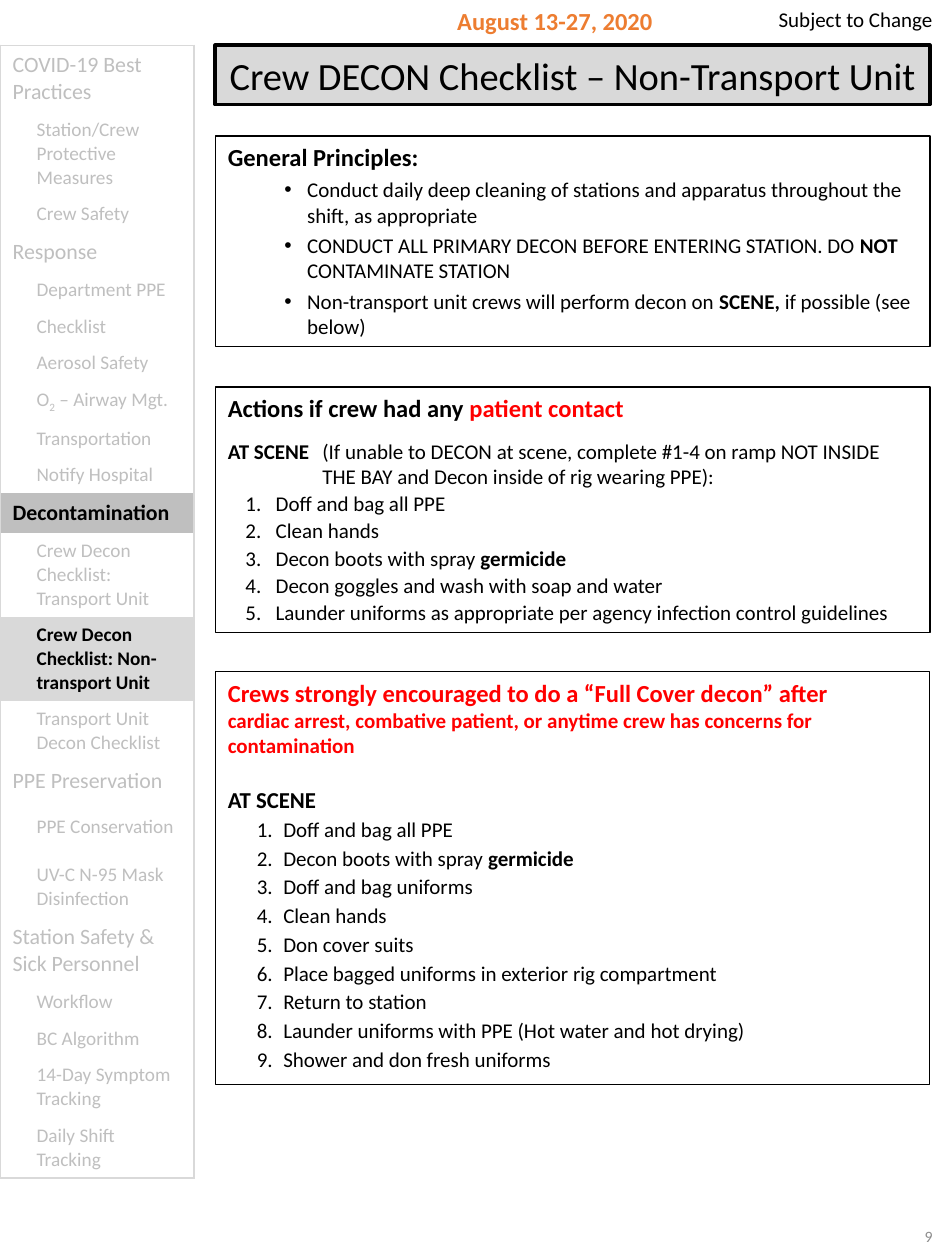
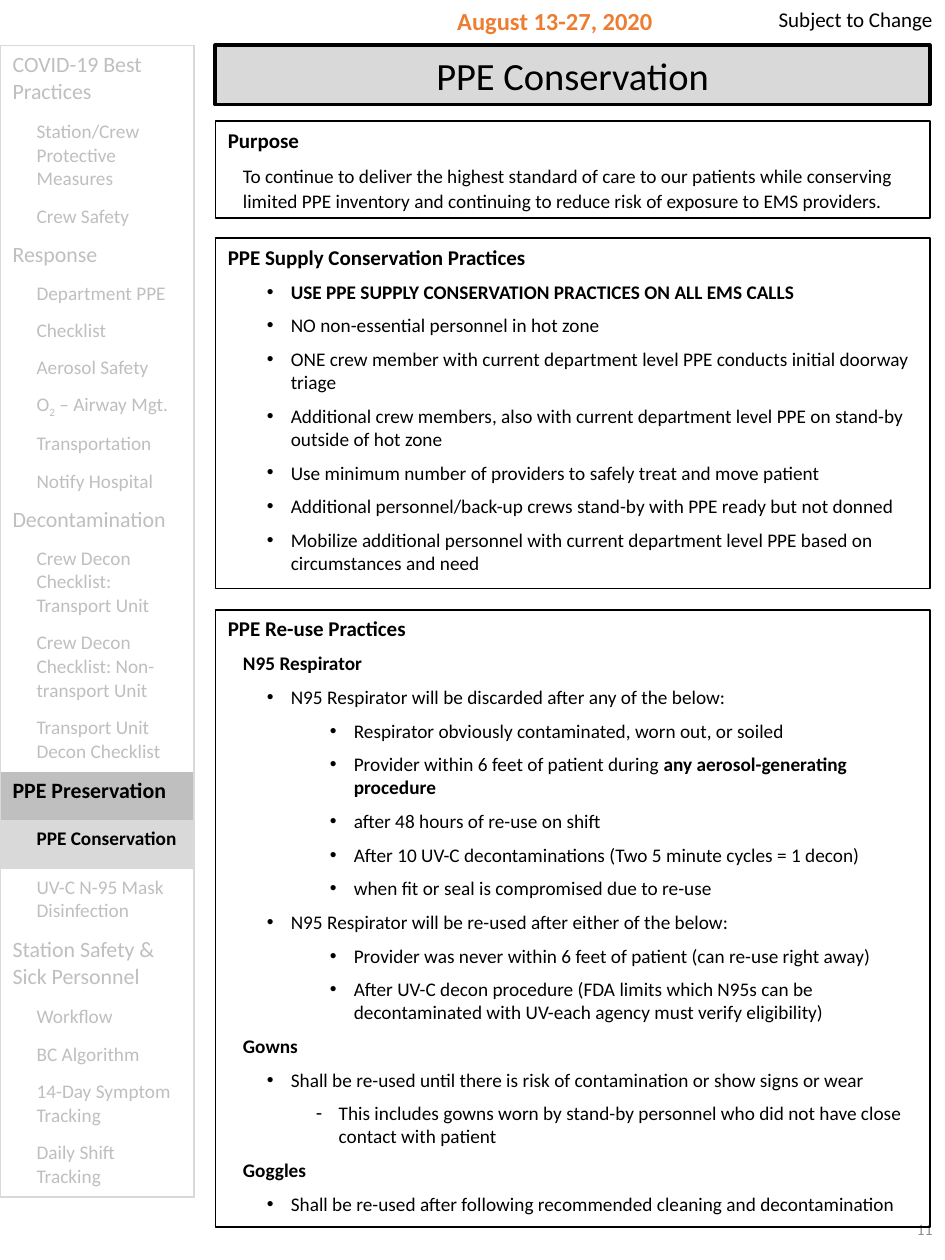
from lxml import etree
from pptx import Presentation
from pptx.dml.color import RGBColor
from pptx.enum.shapes import MSO_SHAPE
from pptx.enum.text import MSO_ANCHOR, MSO_AUTO_SIZE, PP_ALIGN
from pptx.oxml.ns import qn
from pptx.util import Inches, Pt

RECTANGLE = MSO_SHAPE.RECTANGLE
TOP, MIDDLE = MSO_ANCHOR.TOP, MSO_ANCHOR.MIDDLE
NO_AUTOFIT = MSO_AUTO_SIZE.NONE
LEFT, CENTER, RIGHT = PP_ALIGN.LEFT, PP_ALIGN.CENTER, PP_ALIGN.RIGHT

FONT = "Calibri"
BLACK, RED, ORANGE = "000000", "FF0000", "ED7D31"
PALE, MUTED, NUMBER_GRAY = "D9D9D9", "BFBFBF", "8C8C8C"
NO_TABLE_STYLE = "{2D5ABB26-0587-4C30-8999-92F81FD0307C}"

TITLE_ONLY_LAYOUT = 5
CONTENT_LEFT, CONTENT_WIDTH = 1.71, 5.67
BAND_TOP = 0.36
NUMBERED = "1."
BOLD = {"bold": True}

# Row text, row height, is it a section heading
MENU = [
    ("COVID-19 Best Practices", 0.53, True),
    ("Station/Crew Protective Measures", 0.66, False),
    ("Crew Safety", 0.29, False),
    ("Response", 0.31, True),
    ("Department PPE", 0.29, False),
    ("Checklist", 0.29, False),
    ("Aerosol Safety", 0.29, False),
    ([("O", {}), ("2", {"baseline": -25}), (" – Airway Mgt.", {})], 0.29, False),
    ("Transportation", 0.29, False),
    ("Notify Hospital", 0.29, False),
    ("Decontamination", 0.31, True),
    ("Crew Decon Checklist: Transport Unit", 0.66, False),
    ("Crew Decon Checklist: Non-transport Unit", 0.66, False),
    ("Transport Unit Decon Checklist", 0.48, False),
    ("PPE Preservation", 0.38, True),
    ("PPE Conservation", 0.38, False),
    ("UV-C N-95 Mask Disinfection", 0.48, False),
    ("Station Safety & Sick Personnel", 0.53, True),
    ("Workflow", 0.29, False),
    ("BC Algorithm", 0.29, False),
    ("14-Day Symptom Tracking", 0.48, False),
    ("Daily Shift Tracking", 0.48, False),
]


def rgb(value):
    return RGBColor.from_string(value)


def set_bullet(paragraph, bullet):
    properties = paragraph._p.get_or_add_pPr()
    if bullet == NUMBERED:
        etree.SubElement(properties, qn("a:buAutoNum"), type="arabicPeriod")
    else:
        etree.SubElement(properties, qn("a:buFont"), typeface="Arial")
        etree.SubElement(properties, qn("a:buChar"), char=bullet)


def add_run(paragraph, text, size, color, bold, baseline=0):
    run = paragraph.add_run()
    run.text = text
    run.font.name = FONT
    run.font.size = Pt(size)
    run.font.bold = bold
    run.font.color.rgb = rgb(color)
    if baseline:
        run._r.get_or_add_rPr().set("baseline", str(baseline * 1000))


def write(frame, text, size=12, color=BLACK, bold=False, align=LEFT,
          indent=0, hanging=0, before=0, bullet=None, line_spacing=None):
    """Add a paragraph; text is a string or a list of (string, run format)."""
    paragraph = frame.paragraphs[0]
    if paragraph.runs:
        paragraph = frame.add_paragraph()
    paragraph.alignment = align
    properties = paragraph._p.get_or_add_pPr()
    properties.set("marL", str(Inches(indent)))
    properties.set("indent", str(-Inches(hanging)))
    if bullet:
        set_bullet(paragraph, bullet)
    paragraph.space_before = Pt(before)
    if line_spacing:
        paragraph.line_spacing = Pt(line_spacing)
    runs = [(text, {})] if isinstance(text, str) else text
    for part, changes in runs:
        add_run(paragraph, part, **{"size": size, "color": color, "bold": bold, **changes})


def set_border(cell, sides):
    properties = cell._tc.get_or_add_tcPr()
    for side in sides:
        line = etree.SubElement(properties, qn(f"a:ln{side}"), w=str(Pt(1)))
        fill = etree.SubElement(line, qn("a:solidFill"))
        etree.SubElement(fill, qn("a:srgbClr"), val=PALE)


class Guide:
    """The guide's style and the slide being built."""

    def __init__(self):
        self.presentation = Presentation()
        self.presentation.slide_width = Inches(7.5)
        self.presentation.slide_height = Inches(10)
        self.slide = None

    def start_slide(self, title, number, number_top, active, menu_scale=1):
        layout = self.presentation.slide_layouts[TITLE_ONLY_LAYOUT]
        self.slide = self.presentation.slides.add_slide(layout)
        self.add_title(title)
        self.add_label("August 13-27, 2020", 3.53, 0, 2.28, 0.57,
                       size=14, color=ORANGE, bold=True)
        self.add_label("Subject to Change", 5.81, 0, 1.69, 0.3, align=RIGHT)
        self.add_label(number, 5.81, number_top, 1.69, 0.53, anchor=MIDDLE,
                       size=9, color=NUMBER_GRAY, align=RIGHT)
        self.add_menu(active, menu_scale)

    def prepare(self, frame, anchor=TOP):
        frame.word_wrap = True
        frame.auto_size = NO_AUTOFIT
        frame.vertical_anchor = anchor
        return frame

    def add_title(self, text):
        title = self.slide.shapes.title
        title.left, title.top = Inches(CONTENT_LEFT), Inches(BAND_TOP)
        title.width, title.height = Inches(CONTENT_WIDTH), Inches(0.47)
        title.fill.solid()
        title.fill.fore_color.rgb = rgb(PALE)
        title.line.color.rgb = rgb(BLACK)
        title.line.width = Pt(2.25)
        write(self.prepare(title.text_frame), text, size=22, align=CENTER)

    def add_label(self, text, left, top, width, height, anchor=TOP, **style):
        box = self.slide.shapes.add_textbox(
            Inches(left), Inches(top), Inches(width), Inches(height))
        write(self.prepare(box.text_frame, anchor), text, **style)

    def add_menu(self, active, scale):
        """Draw the side menu with the active section and page highlighted."""
        heights = [Inches(height * scale) for _, height, _ in MENU]
        frame = self.slide.shapes.add_table(
            len(MENU), 1, 0, Inches(BAND_TOP), Inches(1.54), sum(heights))
        table = frame.table
        table.first_row = table.horz_banding = False
        table._tbl.tblPr.find(qn("a:tableStyleId")).text = NO_TABLE_STYLE
        for index, (text, _, heading) in enumerate(MENU):
            table.rows[index].height = heights[index]
            cell = table.cell(index, 0)
            sides = ["L", "R"]
            if index == 0:
                sides.append("T")
            if index == len(MENU) - 1:
                sides.append("B")
            set_border(cell, sides)
            current = text in active
            if current:
                cell.fill.solid()
                cell.fill.fore_color.rgb = rgb(MUTED if heading else PALE)
            else:
                cell.fill.background()
            write(cell.text_frame, text, size=12.5 if heading else 11,
                  color=BLACK if current else MUTED, bold=current,
                  indent=0 if heading else 0.19)

    def add_panel(self, top, height, line_width=1):
        """Draw an outlined content box and return its text frame."""
        panel = self.slide.shapes.add_shape(
            RECTANGLE, Inches(CONTENT_LEFT), Inches(top),
            Inches(CONTENT_WIDTH), Inches(height))
        panel.shadow.inherit = False
        panel.fill.background()
        panel.line.color.rgb = rgb(BLACK)
        panel.line.width = Pt(line_width)
        return self.prepare(panel.text_frame)

    def add_list(self, frame, items, **style):
        for item in items:
            write(frame, item, **style)


def build_decon_checklist(guide):
    guide.start_slide("Crew DECON Checklist – Non-Transport Unit", "9", 9.55,
                      ["Decontamination", "Crew Decon Checklist: Non-transport Unit"])
    spray_boots = [("Decon boots with spray ", {}), ("germicide", BOLD)]

    principles = guide.add_panel(1.08, 1.67)
    write(principles, "General Principles:", size=14, bold=True)
    guide.add_list(principles, [
        "Conduct daily deep cleaning of stations and apparatus throughout the shift, as appropriate",
        [("CONDUCT ALL PRIMARY DECON BEFORE ENTERING STATION. DO ", {}),
         ("NOT", BOLD), (" CONTAMINATE STATION", {})],
        [("Non-transport unit crews will perform decon on ", {}),
         ("SCENE, ", BOLD), ("if possible (see below)", {})],
    ], indent=0.63, hanging=0.18, before=3, bullet="•")

    contact = guide.add_panel(3.07, 1.95)
    write(contact, [("Actions if crew had any ", {}), ("patient contact", {"color": RED})],
          size=14, bold=True)
    write(contact, [("AT SCENE\t", BOLD),
                    ("(If unable to DECON at scene, complete #1-4 on ramp NOT INSIDE "
                     "THE BAY and Decon inside of rig wearing PPE):", {})],
          indent=0.75, hanging=0.75, before=9)
    guide.add_list(contact, [
        "Doff and bag all PPE",
        "Clean hands",
        spray_boots,
        "Decon goggles and wash with soap and water",
        "Launder uniforms as appropriate per agency infection control guidelines",
    ], indent=0.38, hanging=0.24, before=1.2, bullet=NUMBERED)

    full_decon = guide.add_panel(5.33, 3.28, line_width=0.75)
    write(full_decon, "Crews strongly encouraged to do a “Full Cover decon” after",
          size=14, color=RED, bold=True)
    write(full_decon, "cardiac arrest, combative patient, or anytime crew has concerns "
          "for contamination", color=RED, bold=True)
    write(full_decon, "AT SCENE", size=13, bold=True, before=16)
    guide.add_list(full_decon, [
        "Doff and bag all PPE",
        spray_boots,
        "Doff and bag uniforms",
        "Clean hands",
        "Don cover suits",
        "Place bagged uniforms in exterior rig compartment",
        "Return to station",
        "Launder uniforms with PPE (Hot water and hot drying)",
        "Shower and don fresh uniforms",
    ], indent=0.44, hanging=0.21, before=2, bullet=NUMBERED)


def build_ppe_conservation(guide):
    guide.start_slide("PPE Conservation", "11", 9.49,
                      ["PPE Preservation", "PPE Conservation"], menu_scale=1.02)
    body = {"size": 11, "before": 6}
    subheading = {**body, "indent": 0.12, "bold": True}
    bullets = {**body, "indent": 0.5, "hanging": 0.19, "bullet": "•"}
    sub_bullets = {**bullets, "indent": 1}

    purpose = guide.add_panel(0.96, 0.77)
    write(purpose, "Purpose", bold=True)
    write(purpose, "To continue to deliver the highest standard of care to our patients "
          "while conserving limited PPE inventory and continuing to reduce risk of "
          "exposure to EMS providers.", indent=0.12, line_spacing=14.2, **body)

    supply = guide.add_panel(1.89, 2.78)
    write(supply, "PPE Supply Conservation Practices", bold=True)
    guide.add_list(supply, [
        [("USE PPE SUPPLY CONSERVATION PRACTICES ON ALL EMS CALLS", BOLD)],
        "NO non-essential personnel in hot zone",
        "ONE crew member with current department level PPE conducts initial doorway triage",
        "Additional crew members, also with current department level PPE on stand-by "
        "outside of hot zone",
        "Use minimum number of providers to safely treat and move patient",
        "Additional personnel/back-up crews stand-by with PPE ready but not donned",
        "Mobilize additional personnel with current department level PPE based on "
        "circumstances and need",
    ], **bullets)

    reuse = guide.add_panel(4.84, 4.9)
    write(reuse, "PPE Re-use Practices", bold=True)
    write(reuse, "N95 Respirator", **subheading)
    write(reuse, "N95 Respirator will be discarded after any of the below:", **bullets)
    guide.add_list(reuse, [
        "Respirator obviously contaminated, worn out, or soiled",
        [("Provider within 6 feet of patient during ", {}),
         ("any aerosol-generating procedure", BOLD)],
        "after 48 hours of re-use on shift",
        "After 10 UV-C decontaminations (Two 5 minute cycles = 1 decon)",
        "when fit or seal is compromised due to re-use",
    ], **sub_bullets)
    write(reuse, "N95 Respirator will be re-used after either of the below:", **bullets)
    guide.add_list(reuse, [
        "Provider was never within 6 feet of patient (can re-use right away)",
        "After UV-C decon procedure (FDA limits which N95s can be decontaminated with "
        "UV-each agency must verify eligibility)",
    ], **sub_bullets)
    write(reuse, "Gowns", **subheading)
    write(reuse, "Shall be re-used until there is risk of contamination or show signs or wear",
          **bullets)
    write(reuse, "This includes gowns worn by stand-by personnel who did not have close "
          "contact with patient", indent=0.88, hanging=0.18, bullet="-", **body)
    write(reuse, "Goggles", **subheading)
    write(reuse, "Shall be re-used after following recommended cleaning and decontamination",
          **bullets)


def main():
    guide = Guide()
    build_decon_checklist(guide)
    build_ppe_conservation(guide)
    guide.presentation.save("out.pptx")


if __name__ == "__main__":
    main()
